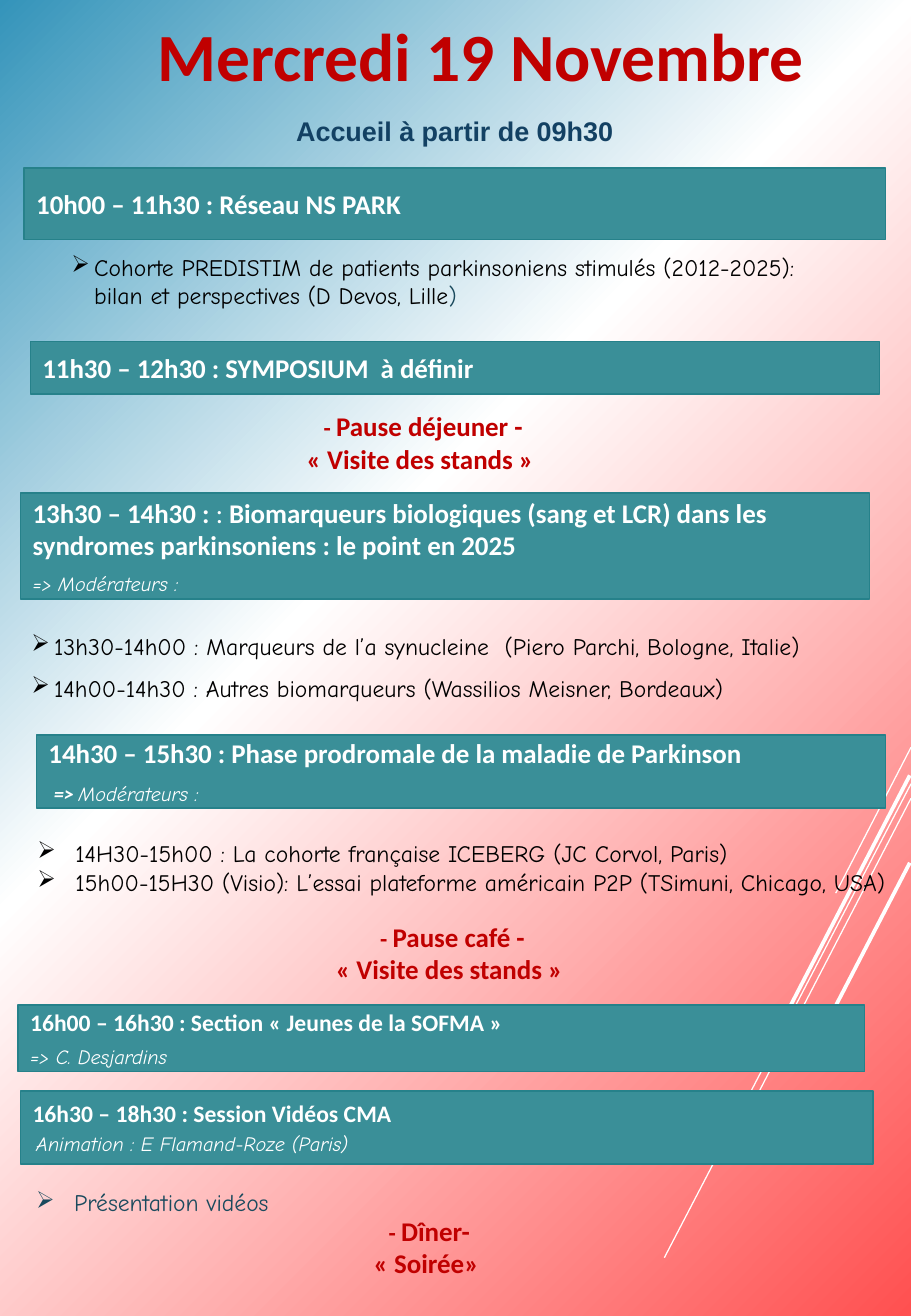
from dataclasses import dataclass, replace

from pptx import Presentation
from pptx.dml.color import RGBColor
from pptx.enum.shapes import MSO_CONNECTOR, MSO_SHAPE
from pptx.enum.text import MSO_ANCHOR, PP_ALIGN
from pptx.oxml import parse_xml
from pptx.oxml.ns import nsdecls, qn
from pptx.util import Pt

RECTANGLE = MSO_SHAPE.RECTANGLE
STRAIGHT = MSO_CONNECTOR.STRAIGHT
TOP, MIDDLE = MSO_ANCHOR.TOP, MSO_ANCHOR.MIDDLE
LEFT, CENTER = PP_ALIGN.LEFT, PP_ALIGN.CENTER


@dataclass(frozen=True)
class Style:
    size: float
    font: str
    color: str
    bold: bool = False
    italic: bool = False


class Theme:
    bar_fill, bar_line = "3A8F98", "26818A"
    ray = "FFFFFF"
    background = [(0, "FF5050"), (59, "FFFFFF"), (100, "3494BA")]
    title = Style(40, "Calibri", "C00000", bold=True)
    welcome = Style(16, "Arial", "134163", bold=True)
    session = Style(16, "Calibri", "FFFFFF", bold=True)
    session_light = replace(session, bold=False)
    session_small = replace(session, size=14)
    arrow = Style(12, "Calibri", "FFFFFF", bold=True, italic=True)
    moderator = Style(12, "Comic Neue", "FFFFFF", italic=True)
    pause = Style(16, "Calibri", "C00000", bold=True)
    pause_dash = replace(pause, size=14)
    talk = Style(14, "Comic Neue", "000000")
    talk_blue = replace(talk, color="1A4A5D")


def rgb(color):
    return RGBColor.from_string(color)


def set_background(slide):
    slide.background.fill.gradient()
    gradient = slide.element.find(".//" + qn("a:gradFill"))
    stops = "".join(
        f'<a:gs pos="{position * 1000}"><a:srgbClr val="{color}"/></a:gs>'
        for position, color in Theme.background)
    gradient.getparent().replace(gradient, parse_xml(
        f'<a:gradFill {nsdecls("a")} rotWithShape="1"><a:gsLst>{stops}</a:gsLst>'
        '<a:path path="circle"><a:fillToRect l="100000" t="100000"/></a:path>'
        '</a:gradFill>'))


def add_ray(slide, x1, y1, x2, y2, width):
    ray = slide.shapes.add_connector(STRAIGHT, Pt(x1), Pt(y1), Pt(x2), Pt(y2))
    ray.line.color.rgb = rgb(Theme.ray)
    ray.line.width = Pt(width)
    ray._element.spPr.append(parse_xml(f'<a:effectLst {nsdecls("a")}/>'))


def add_bullet(paragraph, indent):
    properties = paragraph._p.get_or_add_pPr()
    properties.set("marL", str(Pt(indent)))
    properties.set("indent", str(-Pt(indent)))
    properties.append(parse_xml(f'<a:buChar {nsdecls("a")} char="➢"/>'))


def write(text_frame, paragraphs, align=LEFT, anchor=TOP, gap=0):
    """Each paragraph is a list of (text, style) runs."""
    text_frame.word_wrap = True
    text_frame.vertical_anchor = anchor
    for index, runs in enumerate(paragraphs):
        paragraph = text_frame.add_paragraph() if index else text_frame.paragraphs[0]
        paragraph.alignment = align
        if index and gap:
            paragraph.space_before = Pt(gap)
        for text, style in runs:
            run = paragraph.add_run()
            run.text = text
            run.font.size = Pt(style.size)
            run.font.name = style.font
            run.font.bold = style.bold
            run.font.italic = style.italic
            run.font.color.rgb = rgb(style.color)


def add_text(slide, left, top, width, height, paragraphs, **layout):
    box = slide.shapes.add_textbox(Pt(left), Pt(top), Pt(width), Pt(height))
    write(box.text_frame, paragraphs, **layout)
    return box.text_frame


def add_session(slide, left, top, width, height, paragraphs, gap=0):
    bar = slide.shapes.add_shape(RECTANGLE, Pt(left), Pt(top), Pt(width), Pt(height))
    bar.shadow.inherit = False
    bar.fill.solid()
    bar.fill.fore_color.rgb = rgb(Theme.bar_fill)
    bar.line.color.rgb = rgb(Theme.bar_line)
    bar.line.width = Pt(1)
    write(bar.text_frame, paragraphs, anchor=MIDDLE, gap=gap)
    return bar.text_frame


def add_talks(slide, left, top, width, height, talks, indent, spacings):
    text_frame = add_text(slide, left, top, width, height, talks)
    for paragraph, spacing in zip(text_frame.paragraphs, spacings):
        paragraph.line_spacing = spacing
        add_bullet(paragraph, indent)


def add_pause(slide, left, top, name, activity):
    add_text(slide, left, top, 275.8, 38.9,
             [[("- ", Theme.pause_dash), (name, Theme.pause)],
              [(activity, Theme.pause)]], align=CENTER, anchor=MIDDLE)


def main():
    presentation = Presentation()
    presentation.slide_width, presentation.slide_height = Pt(540), Pt(779.76)
    slide = presentation.slides.add_slide(presentation.slide_layouts[6])

    # Background and white rays
    set_background(slide)
    for ray in [(540, 442.8, 495.4, 529.2, 0.75),
                (540, 464.4, 393.8, 745.2, 0.75),
                (540, 473, 447.1, 652.3, 0.75),
                (539.3, 459.4, 454.3, 623.5, 2.25),
                (539.3, 511.2, 477.4, 630.7, 2.25)]:
        add_ray(slide, *ray)

    # Heading
    add_text(slide, 84.2, 5, 401.8, 55.4,
             [[("Mercredi 19 Novembre", Theme.title)]], align=CENTER)
    add_text(slide, 165.6, 64.8, 208, 25.2,
             [[("Accueil à partir de 09h30", Theme.welcome)]],
             align=CENTER, anchor=MIDDLE)

    # Morning
    add_session(slide, 14.4, 99.4, 510.5, 42.5,
                [[("10h00 – 11h30 : Réseau NS PARK", Theme.session)]])
    add_talks(slide, 35.3, 146.2, 460.8, 41,
              [[("Cohorte PREDISTIM de patients parkinsoniens stimulés (2012-2025): "
                 "bilan et perspectives (D Devos, Lille", Theme.talk),
                (")", Theme.talk_blue)]], 13.5, [1])
    add_session(slide, 18, 202.3, 503.3, 31,
                [[("11h30 – 12h30 : SYMPOSIUM  à définir", Theme.session)]])
    add_pause(slide, 113, 242.6, "Pause déjeuner -", "« Visite des stands » ")

    # Early afternoon
    add_session(slide, 12.2, 292.3, 503.3, 62.6,
                [[("13h30 – 14h30 : ", Theme.session), (": ", Theme.session_light),
                  ("Biomarqueurs biologiques (sang et LCR) dans les syndromes "
                   "parkinsoniens : le point en 2025", Theme.session)],
                 [("=> Modérateurs :", Theme.moderator)]], gap=6)
    add_talks(slide, 11.5, 362.2, 513.4, 52.6,
              [[("13h30-14h00 : Marqueurs de l’a synucleine  "
                 "(Piero Parchi, Bologne, Italie)", Theme.talk)],
               [("14h00-14h30 : Autres biomarqueurs (Wassilios Meisner, Bordeaux)",
                 Theme.talk)]], 13.5, [1.5, 1.5])
    add_session(slide, 21.6, 435.6, 503.3, 43.2,
                [[("14h30 – 15h30 : Phase prodromale de la maladie de Parkinson",
                   Theme.session)],
                 [(" ", Theme.session_small), ("=> ", Theme.arrow),
                  ("Modérateurs :", Theme.moderator)]], gap=5)
    add_talks(slide, 15.1, 485.3, 524.9, 67,
              [[("14H30-15h00 : La cohorte française ICEBERG (JC Corvol, Paris)",
                 Theme.talk)],
               [("15h00-15H30 (Visio): L’essai plateforme américain P2P "
                 "(TSimuni, Chicago, USA)", Theme.talk)]], 22.5, [1.5, 1])
    add_pause(slide, 130.3, 545, "Pause café -", "« Visite des stands » ")

    # Late afternoon
    add_session(slide, 10.8, 595.4, 501.8, 39.6,
                [[("16h00 – 16h30 : Section « Jeunes de la SOFMA »",
                   Theme.session_small)],
                 [("=> C. Desjardins", Theme.moderator)]], gap=5)
    video_frame = add_session(slide, 12.2, 646.6, 505.4, 43.2,
                              [[("16h30 – 18h30 : Session Vidéos CMA",
                                 Theme.session_small)]])
    video_frame.margin_bottom = Pt(20.7)
    add_text(slide, 14.4, 666.7, 329.8, 21.6,
             [[("Animation : E Flamand-Roze (Paris)", Theme.moderator)]])
    add_talks(slide, 14.4, 700.6, 486, 19.4,
              [[("Présentation vidéos", Theme.talk_blue)]], 22.5, [1])

    # Evening
    add_pause(slide, 116.6, 719.3, "Dîner-", "« Soirée» ")

    presentation.save("out.pptx")


if __name__ == "__main__":
    main()
